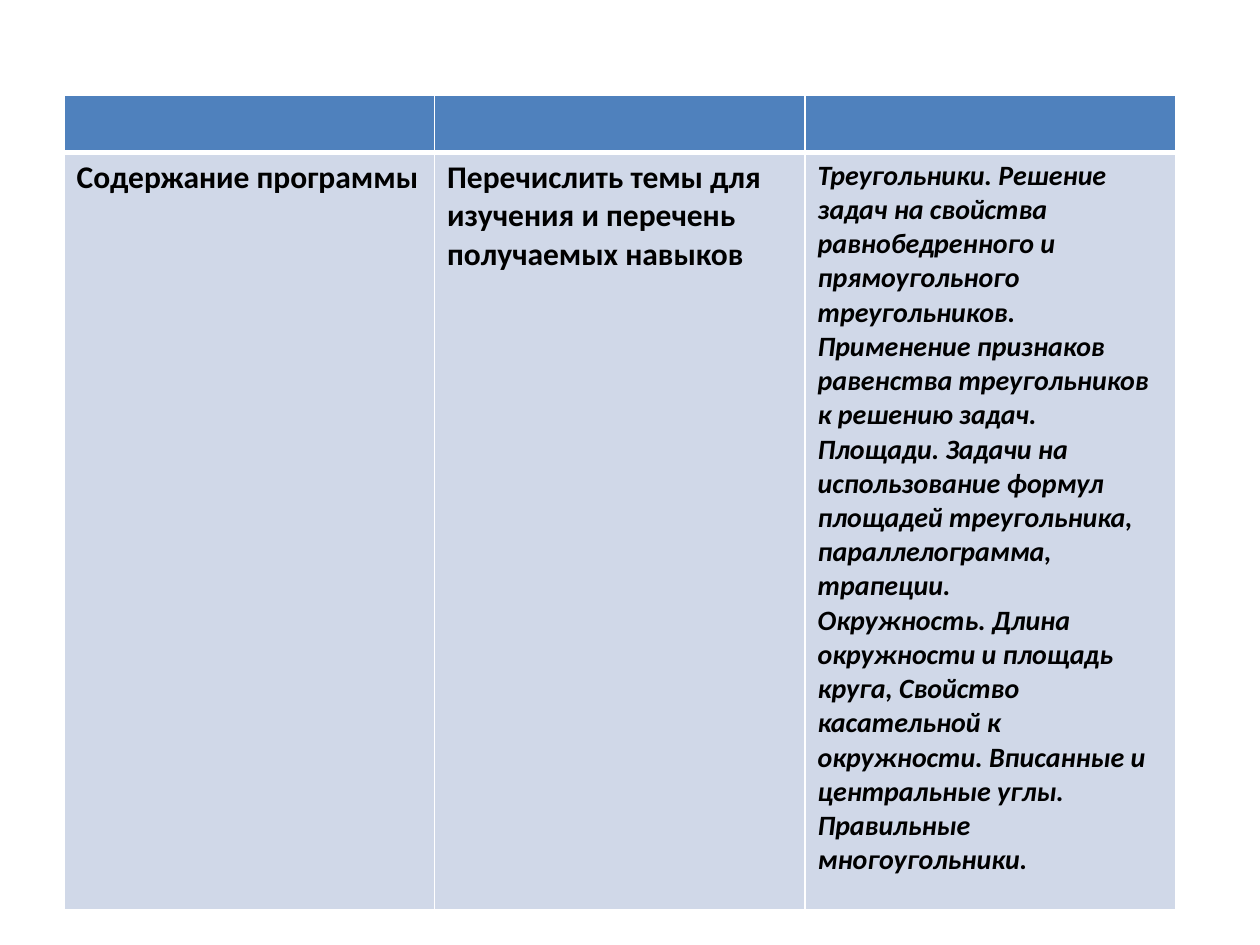
"""Build a slide with a table describing the contents of a geometry course."""
from lxml import etree
from pptx import Presentation
from pptx.dml.color import RGBColor
from pptx.oxml.ns import qn
from pptx.util import Cm, Pt

HEADER_BLUE = RGBColor(0x4F, 0x81, 0xBD)
BODY_BLUE = RGBColor(0xD0, 0xD8, 0xE8)
BLACK = RGBColor(0, 0, 0)
WHITE = RGBColor(0xFF, 0xFF, 0xFF)

ROW_HEIGHTS = [Cm(1.14), Cm(15.27)]
COLUMN_WIDTH = Cm(7.47)
THIN, THICK = Pt(1), Pt(3)

CONTENTS = [
    (["Содержание программы"], 18, False),
    (["Перечислить темы для изучения и перечень получаемых навыков"], 18, False),
    (
        [
            "Треугольники. Решение задач на свойства равнобедренного и прямоугольного "
            "треугольников. Применение признаков равенства треугольников к решению задач.",
            "Площади. Задачи на использование формул площадей треугольника, "
            "параллелограмма, трапеции.",
            "Окружность. Длина окружности и площадь круга, Свойство касательной к "
            "окружности. Вписанные и центральные углы. Правильные многоугольники.",
        ],
        16,
        True,
    ),
]


def style_cell(cell, color, top, bottom):
    properties = cell._tc.get_or_add_tcPr()
    for side, width in (("L", THIN), ("R", THIN), ("T", top), ("B", bottom)):
        border = etree.SubElement(properties, qn(f"a:ln{side}"), w=str(width))
        fill = etree.SubElement(border, qn("a:solidFill"))
        etree.SubElement(fill, qn("a:srgbClr"), val=str(WHITE))
    cell.fill.solid()
    cell.fill.fore_color.rgb = color


presentation = Presentation()
presentation.slide_width = Cm(25.4)
presentation.slide_height = Cm(19.05)
slide = presentation.slides.add_slide(presentation.slide_layouts[6])

table = slide.shapes.add_table(
    2, len(CONTENTS), Cm(1.29), Cm(1.93), COLUMN_WIDTH * len(CONTENTS), sum(ROW_HEIGHTS)
).table
for row, height in zip(table.rows, ROW_HEIGHTS):
    row.height = height

for index, (texts, size, italic) in enumerate(CONTENTS):
    table.columns[index].width = COLUMN_WIDTH
    style_cell(table.cell(0, index), HEADER_BLUE, THIN, THICK)
    cell = table.cell(1, index)
    style_cell(cell, BODY_BLUE, THICK, THIN)
    cell.text = "\n".join(texts)
    for paragraph in cell.text_frame.paragraphs:
        font = paragraph.font
        font.name = "Calibri"
        font.size = Pt(size)
        font.bold = True
        font.italic = italic
        font.color.rgb = BLACK

presentation.save("out.pptx")
